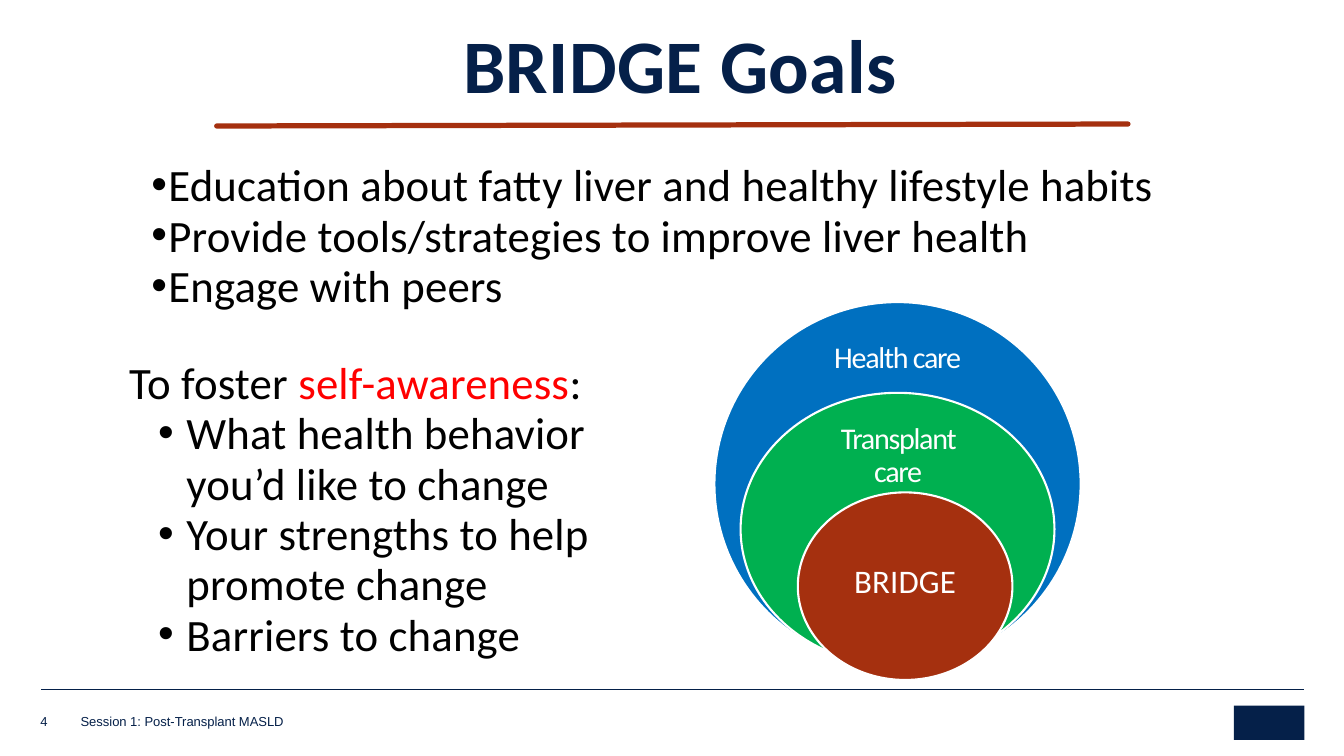
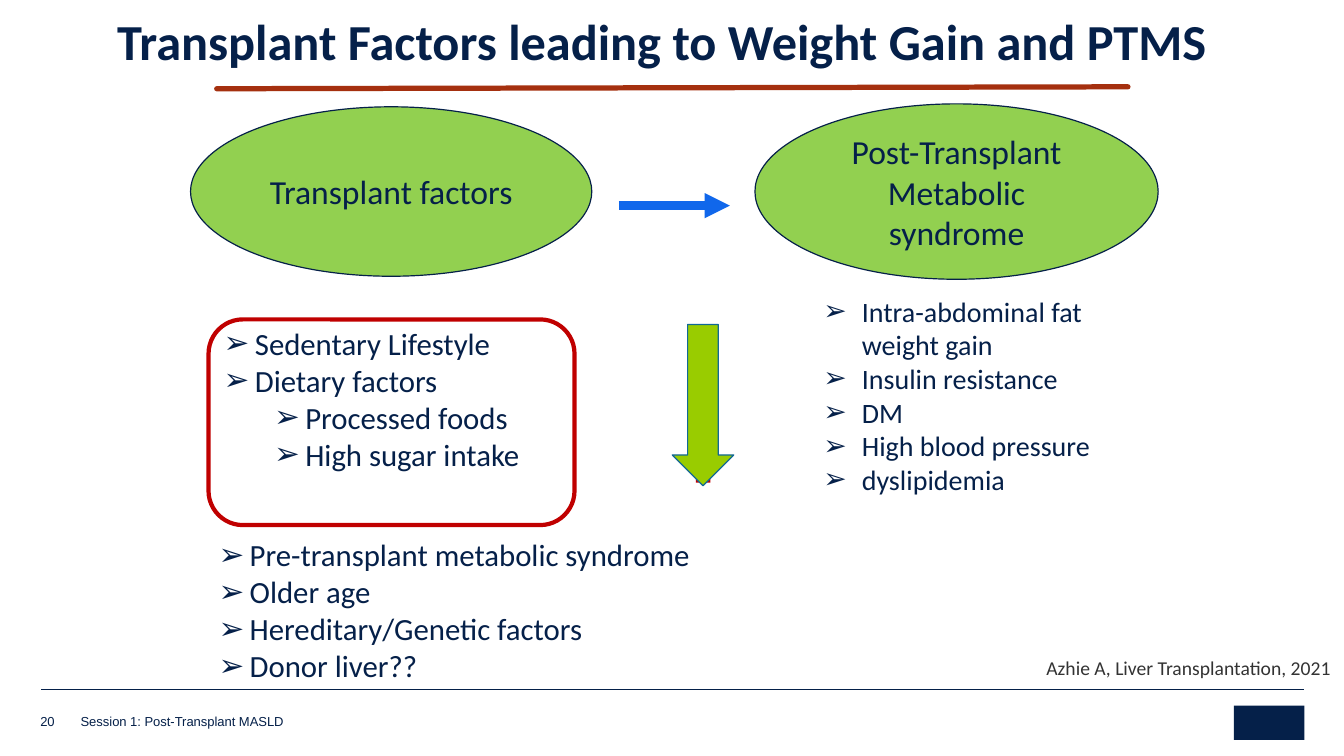
from lxml import etree
from pptx import Presentation
from pptx.dml.color import RGBColor
from pptx.enum import shapes, text
from pptx.oxml.ns import qn
from pptx.util import Pt

COLORS = {
    "navy": "052049", "rust": "A5300F", "black": "000000", "white": "FFFFFF",
    "red": "FF0000", "crimson": "C00000", "blue": "0070C0", "green": "00B050",
    "lime": "92D050", "olive": "99CC00", "teal": "116896", "arrow": "1067EB",
    "gray": "333333",
}
RGB = {name: RGBColor.from_string(value) for name, value in COLORS.items()}
KINDS = shapes.MSO_SHAPE
CENTER = text.PP_ALIGN.CENTER
TOP, MIDDLE, BOTTOM = (text.MSO_ANCHOR.TOP, text.MSO_ANCHOR.MIDDLE,
                       text.MSO_ANCHOR.BOTTOM)
FLUSH = (0, 0)


def write(shape, paragraphs, size, color="navy", font="Calibri", bold=False,
          align=None, anchor=TOP, insets=(7.2, 3.6), spacing=1.0, tracking=0,
          bullet=None, indents=((0, 0),), wrap=True):
    """Fill a shape; a paragraph is (level, [(words, color or None), ...])."""
    frame = shape.text_frame
    side, edge = insets
    frame_format = {
        "word_wrap": wrap, "auto_size": text.MSO_AUTO_SIZE.NONE,
        "vertical_anchor": anchor, "margin_left": Pt(side),
        "margin_right": Pt(side), "margin_top": Pt(edge), "margin_bottom": Pt(edge),
    }
    for name, value in frame_format.items():
        setattr(frame, name, value)
    for index, (level, runs) in enumerate(paragraphs):
        paragraph = frame.add_paragraph() if index else frame.paragraphs[0]
        properties = paragraph._p.get_or_add_pPr()
        margin, hanging = indents[level]
        bulleted = bullet and margin
        properties.set("marL", str(Pt(margin)))
        properties.set("indent", str(Pt(-hanging)))
        if bulleted:
            etree.SubElement(properties, qn("a:buFont"), typeface="Arial")
            etree.SubElement(properties, qn("a:buChar"), char=bullet)
        else:
            etree.SubElement(properties, qn("a:buNone"))
        paragraph_format = {"alignment": align, "line_spacing": spacing,
                            "space_before": Pt(0), "space_after": Pt(0)}
        for name, value in paragraph_format.items():
            setattr(paragraph, name, value)
        for words, run_color in runs:
            run = paragraph.add_run()
            run.text = words
            for name, value in {"name": font, "size": Pt(size), "bold": bold}.items():
                setattr(run.font, name, value)
            run.font.color.rgb = RGB[run_color or color]
            if tracking:
                run._r.get_or_add_rPr().set("spc", str(round(tracking * 100)))


def draw_line(slide, start, end, color, width, **ends):
    line = slide.shapes.add_connector(shapes.MSO_CONNECTOR.STRAIGHT,
                                      *map(Pt, start + end))
    line.line.color.rgb = RGB[color]
    line.line.width = Pt(width)
    properties = line._element.spPr
    outline = properties.find(qn("a:ln"))
    if "cap" in ends:
        outline.set("cap", ends["cap"])
    if "tail" in ends:
        etree.SubElement(outline, qn("a:tailEnd"), type=ends["tail"])
    etree.SubElement(properties, qn("a:effectLst"))


presentation = Presentation()
presentation.slide_width, presentation.slide_height = Pt(960), Pt(540)
two_content = presentation.slide_layouts[3]

# Shared parts: title, rule under it, footer
titles = [
    ("BRIDGE Goals", "4", (311, 24.5, 350, 54.7), 90,
     {"size": 54, "insets": FLUSH, "spacing": Pt(52.8), "tracking": 0.3}),
    ("Transplant Factors leading\u00a0to Weight Gain and PTMS".replace("\u00a0", " "),
     "20", (60.5, 10, 825, 50), 63.4, {"size": 36, "spacing": 0.85}),
]
slides = []
for title, number, box, rule_top, style in titles:
    slide = presentation.slides.add_slide(two_content)
    slides.append(slide)
    heading = slide.shapes.title
    heading.left, heading.top, heading.width, heading.height = map(Pt, box)
    write(heading, [(0, [(title, None)])], bold=True, align=CENTER, **style)
    draw_line(slide, (154.8, rule_top), (805.7, rule_top - 1.4), "rust", 3.75, cap="rnd")
    draw_line(slide, (29.5, 492.5), (931.7, 492.5), "navy", 0.25)
    footers = [("Session 1: Post-Transplant MASLD", (57.6, 509.8, 452.9, 10.8)),
               (number, (28.8, 508.3, 25.9, 12.2))]
    for words, place in footers:
        footer = slide.shapes.add_textbox(*map(Pt, place))
        write(footer, [(0, [(words, None)])], 9.3, font="Arial", anchor=BOTTOM,
              insets=FLUSH)
    emblem = slide.shapes.add_shape(KINDS.RECTANGLE, *map(Pt, (881.3, 504, 50.4, 24.5)))
    emblem.shadow.inherit = False
    emblem.fill.solid()
    emblem.fill.fore_color.rgb = RGB["navy"]
    emblem.line.fill.background()
goals, factors = slides

# Preset shapes: slide, kind, box, fill, outline, outline width, rotation, words
preset_shapes = [
    (goals, KINDS.OVAL, (510.3, 215.8, 261.6, 259.8), "blue", "white", 1.5, 0, []),
    (goals, KINDS.OVAL, (529, 280.6, 224.2, 194.8), "green", "white", 1.5, 0, []),
    (goals, KINDS.OVAL, (569.9, 351.7, 153.3, 134), "rust", "white", 1.5, 0, []),
    (factors, KINDS.OVAL, (539.3, 74.2, 288, 125.3), "lime", "navy", 0.85, 0,
     ["Post-Transplant Metabolic", "syndrome"]),
    (factors, KINDS.OVAL, (136.1, 76.3, 286.6, 121), "lime", "navy", 0.85, 0,
     ["Transplant factors"]),
    (factors, KINDS.ROUNDED_RECTANGLE, (149, 228.2, 261.4, 146.9), None, "crimson", 3, 0, []),
    (factors, KINDS.DOWN_ARROW, (491.8, 235.4, 20.9, 109.4), "crimson", None, 0, 180, []),
    (factors, KINDS.DOWN_ARROW, (480.2, 231.8, 43.9, 115.2), "olive", "teal", 0.85, 0, []),
]
for slide, kind, box, fill, outline, width, rotation, lines in preset_shapes:
    shape = slide.shapes.add_shape(kind, *map(Pt, box))
    shape.shadow.inherit = False
    shape.rotation = rotation
    if fill:
        shape.fill.solid()
        shape.fill.fore_color.rgb = RGB[fill]
    else:
        shape.fill.background()
    if outline:
        shape.line.color.rgb = RGB[outline]
        shape.line.width = Pt(width)
    else:
        shape.line.fill.background()
    if lines:
        write(shape, [(0, [(words, None)]) for words in lines], 24,
              align=CENTER, anchor=MIDDLE)

# Circle labels
labels = [
    ("Health care", (583.2, 244.1, 115.9, 24.5), 21.5, 23.8, -0.9),
    ("Transplant care", (585.4, 301.7, 112.3, 48.2), 21.5, 23.8, -0.9),
    ("BRIDGE", (598.3, 402.5, 96.5, 25.9), 23.5, 25.9, 0.1),
]
for words, box, size, spacing, tracking in labels:
    label = goals.shapes.add_textbox(*map(Pt, box))
    write(label, [(0, [(words, None)])], size, "white", align=CENTER, insets=FLUSH,
          spacing=Pt(spacing), tracking=tracking)

# Arrow between the ellipses
draw_line(factors, (442.1, 146.9), (521.3, 146.9), "arrow", 6, tail="triangle")

# Lists
goal_style = {"size": 32, "color": "black", "insets": FLUSH, "spacing": Pt(36),
              "tracking": 0.1, "bullet": "•"}
factor_style = {"size": 22, "bullet": "➢", "indents": ((22.3, 22.3), (58.3, 22.3))}
lists = [
    (goals.placeholders[1], (95.8, 114.5, 779.8, 108.7),
     [(0, "Education about fatty liver and healthy lifestyle habits"),
      (0, "Provide tools/strategies to improve liver health"),
      (0, "Engage with peers")],
     goal_style | {"indents": ((24.5, 12.2),)}),
    (goals.placeholders[2], (92.2, 255.6, 362.2, 216.7),
     [(0, [("To foster ", None), ("self-awareness", "red"), (":", None)]),
      (1, "What health behavior you’d like to change"),
      (1, "Your strengths to help promote change"),
      (1, "Barriers to change")],
     goal_style | {"indents": ((0, 0), (41, 20.2))}),
    (factors.placeholders[1], (152.6, 228.2, 252, 113.8),
     [(0, "Sedentary Lifestyle"), (0, "Dietary factors"),
      (1, "Processed foods"), (1, "High sugar intake")], factor_style),
    (factors.placeholders[2], (581, 206.6, 221.8, 152.6),
     [(0, "Intra-abdominal fat weight gain"), (0, "Insulin resistance"), (0, "DM"),
      (0, "High blood pressure"), (0, "dyslipidemia")],
     {"size": 20, "bullet": "➢", "indents": ((27.4, 27.4),)}),
    (factors.shapes.add_textbox(0, 0, 0, 0), (149, 379.4, 450, 140.4),
     [(0, "Pre-transplant metabolic syndrome"), (0, "Older age"),
      (0, "Hereditary/Genetic factors"), (0, "Donor liver??")], factor_style),
]
for holder, box, items, style in lists:
    holder.left, holder.top, holder.width, holder.height = map(Pt, box)
    paragraphs = [(level, [(words, None)] if isinstance(words, str) else words)
                  for level, words in items]
    write(holder, paragraphs, **style)

# Citation
citation = factors.shapes.add_textbox(*map(Pt, (736.6, 463.7, 223.4, 26.6)))
write(citation, [(0, [("Azhie A, Liver Transplantation, 2021", None)])], 14, "gray",
      anchor=MIDDLE, insets=(10.8, 0), wrap=False, align=text.PP_ALIGN.LEFT)

presentation.save("out.pptx")
